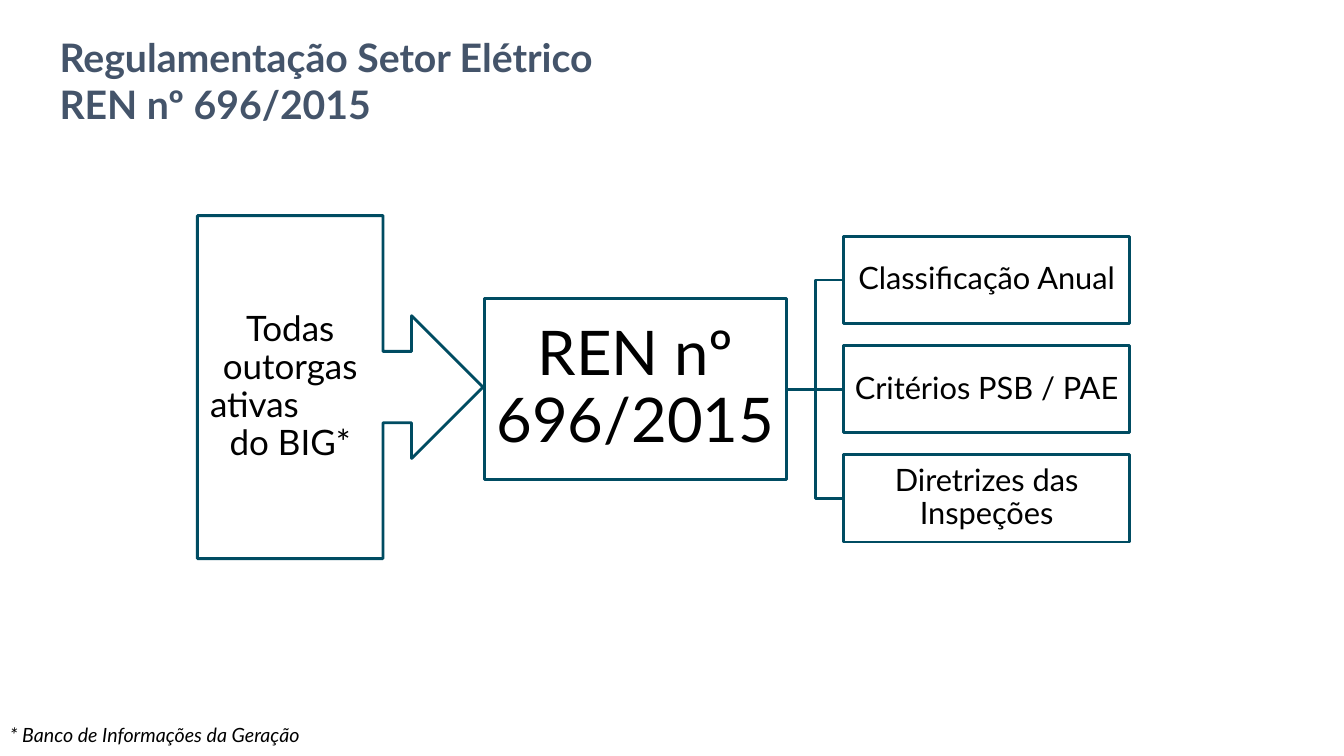
import pptx
import pptx.dml.color
import pptx.enum.shapes
import pptx.enum.text
import pptx.util
from lxml import etree

Pt = pptx.util.Pt
SHAPE = pptx.enum.shapes.MSO_SHAPE
CONNECTOR = pptx.enum.shapes.MSO_CONNECTOR
ALIGN = pptx.enum.text.PP_ALIGN
MIDDLE = pptx.enum.text.MSO_ANCHOR.MIDDLE
TEAL = "004C62"


def rgb(color):
    return pptx.dml.color.RGBColor.from_string(color)


def write(s, lines, size, color="000000", inset=None):
    """Fill a shape or text box with one paragraph per line."""
    tf = s.text_frame
    tf.word_wrap = True
    tf.text = "\n".join(lines)
    if inset is not None:
        tf.vertical_anchor = MIDDLE
        tf.margin_left = tf.margin_right = Pt(inset)
        tf.margin_top = tf.margin_bottom = Pt(1.5)
    for p in tf.paragraphs:
        if inset is not None:
            p.alignment = ALIGN.CENTER
            p.line_spacing = 0.9
        for r in p.runs:
            r.font.name = "Lato"
            r.font.size = Pt(size)
            r.font.color.rgb = rgb(color)
    return tf


prs = pptx.Presentation()
prs.slide_width, prs.slide_height = Pt(960), Pt(540)
slide = prs.slides.add_slide(prs.slide_layouts[6])

# Title, in the upper part of its box
title = slide.shapes.add_textbox(Pt(35.5), Pt(37.5), Pt(612), Pt(73.5))
tf = write(title, ["Regulamentação Setor Elétrico", "REN nº 696/2015"], 28, "44546A")
tf.vertical_anchor = MIDDLE
tf.margin_bottom = Pt(37)
for p in tf.paragraphs:
    p.runs[0].font.bold = True

# Diagram: the hub and its three topics share one centre line
CENTER, TOPIC_H, PITCH = 278, 62.4, 78
topics = ["Classificação Anual", "Critérios PSB / PAE", "Diretrizes das Inspeções"]
first_top = CENTER - PITCH - TOPIC_H / 2
parts = [(SHAPE.RECTANGLE, 346, CENTER - 64.5, 216, 129, ["REN nº 696/2015"], 44, 3)]
for i, topic in enumerate(topics):
    parts.append((SHAPE.RECTANGLE, 602.5, first_top + i * PITCH, 204.5, TOPIC_H,
                  [topic], 22, 1.5))
parts.append((SHAPE.RIGHT_ARROW_CALLOUT, 141, 154, 204, 245,
              ["Todas outorgas", "ativas", "do BIG*"], 25, 9))

shapes = []
for kind, left, top, width, height, lines, size, inset in parts:
    s = slide.shapes.add_shape(kind, Pt(left), Pt(top), Pt(width), Pt(height))
    s.shadow.inherit = False
    s.fill.solid()
    s.fill.fore_color.rgb = rgb("FFFFFF")
    s.line.color.rgb = rgb(TEAL)
    s.line.width = Pt(2)
    write(s, lines, size, inset=inset)
    shapes.append(s)
hub, *topic_boxes, callout = shapes
callout.text_frame.paragraphs[1].alignment = ALIGN.LEFT

# Branches from the hub to the topics
for i, box in enumerate(topic_boxes):
    kind = CONNECTOR.STRAIGHT if i == 1 else CONNECTOR.ELBOW
    branch = slide.shapes.add_connector(kind, 0, 0, 0, 0)
    branch.begin_connect(hub, 3)
    branch.end_connect(box, 1)
    branch.line.color.rgb = rgb(TEAL)
    branch.line.width = Pt(2)
    etree.SubElement(branch._element.spPr, pptx.oxml.ns.qn("a:effectLst"))

# Footnote
note = slide.shapes.add_textbox(Pt(0), Pt(512.5), Pt(238.5), Pt(24.5))
tf = write(note, ["* Banco de Informações da Geração"], 14)
tf.word_wrap = False
tf.auto_size = pptx.enum.text.MSO_AUTO_SIZE.SHAPE_TO_FIT_TEXT
tf.paragraphs[0].runs[0].font.italic = True

prs.save("out.pptx")
